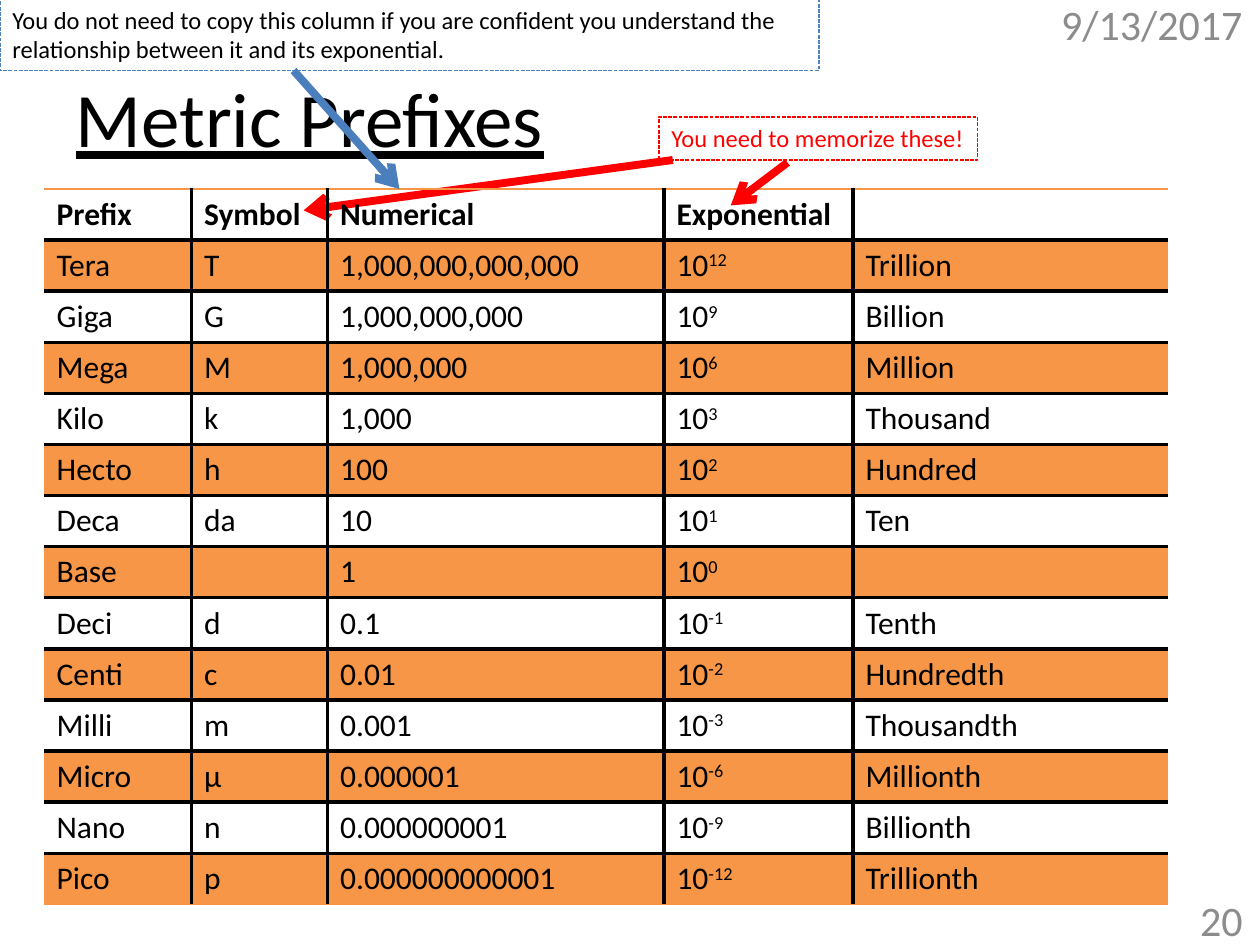
from lxml import etree
from pptx import Presentation
from pptx.dml.color import RGBColor
from pptx.enum.dml import MSO_LINE
from pptx.enum.shapes import MSO_CONNECTOR, MSO_SHAPE
from pptx.enum.text import MSO_ANCHOR, MSO_AUTO_SIZE, PP_ALIGN
from pptx.oxml.ns import qn
from pptx.util import Inches, Pt

STRAIGHT = MSO_CONNECTOR.STRAIGHT
RECTANGLE = MSO_SHAPE.RECTANGLE
DASH = MSO_LINE.SQUARE_DOT
LEFT, RIGHT = PP_ALIGN.LEFT, PP_ALIGN.RIGHT
TOP, MIDDLE = MSO_ANCHOR.TOP, MSO_ANCHOR.MIDDLE
GROW = MSO_AUTO_SIZE.SHAPE_TO_FIT_TEXT

FONT = "Calibri"
BLACK, RED, GREY, ORANGE = "000000", "FF0000", "8C8C8C", "F79646"
NO_GRID_STYLE = "{2D5ABB26-0587-4C30-8999-92F81FD0307C}"

COLUMN_WIDTHS = [1.17, 1.08, 2.67, 1.5, 2.5]
HEADINGS = ["Prefix", "Symbol", "Numerical", "Exponential", ""]
PREFIXES = [
    ("Tera", "T", "1,000,000,000,000", "12", "Trillion"),
    ("Giga", "G", "1,000,000,000", "9", "Billion"),
    ("Mega", "M", "1,000,000", "6", "Million"),
    ("Kilo", "k", "1,000", "3", "Thousand"),
    ("Hecto", "h", "100", "2", "Hundred"),
    ("Deca", "da", "10", "1", "Ten"),
    ("Base", "", "1", "0", ""),
    ("Deci", "d", "0.1", "-1", "Tenth"),
    ("Centi", "c", "0.01", "-2", "Hundredth"),
    ("Milli", "m", "0.001", "-3", "Thousandth"),
    ("Micro", "μ", "0.000001", "-6", "Millionth"),
    ("Nano", "n", "0.000000001", "-9", "Billionth"),
    ("Pico", "p", "0.000000000001", "-12", "Trillionth"),
]
EXPONENT_COLUMN = 3


def rgb(color):
    return RGBColor.from_string(color)


def add_text(p, text, size=18, color=BLACK, bold=False, underline=False,
             superscript=False, align=LEFT):
    p.alignment = align
    r = p.add_run()
    r.text = text
    font = r.font
    font.name, font.size = FONT, Pt(size)
    font.bold, font.underline = bold, underline
    font.color.rgb = rgb(color)
    if superscript:
        r._r.get_or_add_rPr().set("baseline", "30000")


def place(sp, left, top, width, height):
    sp.left, sp.top = Inches(left), Inches(top)
    sp.width, sp.height = Inches(width), Inches(height)


def add_title(s, box):
    title = s.shapes.title
    place(title, *box)
    tf = title.text_frame
    tf.vertical_anchor = MIDDLE
    add_text(tf.paragraphs[0], "Metric Prefixes", size=44, underline=True)
    # Bring the title in front of the shapes added so far.
    s.shapes._spTree.append(title._element)


def add_corner_text(s, box, text):
    tb = s.shapes.add_textbox(*map(Inches, box))
    tf = tb.text_frame
    tf.word_wrap = True
    tf.vertical_anchor = MIDDLE
    add_text(tf.paragraphs[0], text, size=24, color=GREY, align=RIGHT)


def add_callout(s, box, text, line, color):
    sp = s.shapes.add_shape(RECTANGLE, *map(Inches, box))
    sp.shadow.inherit = False
    sp.fill.background()
    sp.line.color.rgb = rgb(line)
    sp.line.width = Pt(0.75)
    sp.line.dash_style = DASH
    tf = sp.text_frame
    tf.word_wrap = True
    tf.auto_size = GROW
    tf.vertical_anchor = TOP
    add_text(tf.paragraphs[0], text, size=14, color=color)


def add_arrow(s, start, end, color):
    cx = s.shapes.add_connector(STRAIGHT, *map(Inches, start + end))
    cx.line.color.rgb = rgb(color)
    cx.line.width = Pt(4.5)
    etree.SubElement(cx.line._get_or_add_ln(), qn("a:tailEnd"), type="arrow")
    etree.SubElement(cx._element.spPr, qn("a:effectLst"))


def set_border(cell, side, color=None, width=0.0):
    """Draw one side of a cell, or clear it when no colour is given."""
    ln = etree.SubElement(cell._tc.get_or_add_tcPr(), qn("a:ln" + side),
                          w=str(Pt(width)))
    if color is None:
        etree.SubElement(ln, qn("a:noFill"))
    else:
        fill = etree.SubElement(ln, qn("a:solidFill"))
        etree.SubElement(fill, qn("a:srgbClr"), val=color)


def tint(cell):
    cell.fill.solid()
    cell.fill.fore_color.rgb = rgb(ORANGE)
    color = cell._tc.tcPr.find(".//" + qn("a:srgbClr"))
    etree.SubElement(color, qn("a:alpha"), val="20000")


def add_prefix_table(s, box):
    rows = [HEADINGS] + PREFIXES
    last_row, last_col = len(rows) - 1, len(HEADINGS) - 1
    table = s.shapes.add_table(len(rows), len(HEADINGS),
                               *map(Inches, box)).table
    table.first_row = table.horz_banding = False
    table._tbl.tblPr.find(qn("a:tableStyleId")).text = NO_GRID_STYLE
    for column, width in zip(table.columns, COLUMN_WIDTHS):
        column.width = Inches(width)
    grid, edge, blank = (BLACK, 2.25), (ORANGE, 1), ()
    for i, values in enumerate(rows):
        table.rows[i].height = Inches(box[3] / len(rows))
        for j, value in enumerate(values):
            cell = table.cell(i, j)
            p = cell.text_frame.paragraphs[0]
            if i and j == EXPONENT_COLUMN:
                add_text(p, "10")
                add_text(p, value, superscript=True)
            elif value:
                add_text(p, value, bold=i == 0)
            set_border(cell, "L", *(grid if j else blank))
            set_border(cell, "R", *(grid if j < last_col else blank))
            set_border(cell, "T", *(grid if i else edge))
            set_border(cell, "B", *(grid if i < last_row else edge))
            if i % 2:
                tint(cell)
            else:
                cell.fill.background()


def build_prefix_slide(prs):
    s = prs.slides.add_slide(prs.slide_layouts[5])
    add_arrow(s, (5.34, 1.27), (2.41, 1.67), RED)
    add_title(s, (0.5, 0.3, 9, 1.25))
    add_prefix_table(s, (0.35, 1.5, 8.92, 5.68))
    add_corner_text(s, (8.25, -0.01, 1.71, 0.4), "9/13/2017")
    add_arrow(s, (2.33, 0.56), (3.17, 1.5), "4B7EBC")
    add_callout(s, (0, -0.01, 6.5, 0.57),
                "You do not need to copy this column if you are confident you "
                "understand the relationship between it and its exponential.",
                line="4F81BD", color=BLACK)
    add_corner_text(s, (9.29, 7.1, 0.67, 0.4), "20")
    add_callout(s, (5.23, 0.93, 2.53, 0.34), "You need to memorize these!",
                line=RED, color=RED)
    add_arrow(s, (6.25, 1.29), (5.8, 1.63), RED)


def main():
    prs = Presentation()
    prs.slide_width, prs.slide_height = Inches(10), Inches(7.5)
    build_prefix_slide(prs)
    prs.save("out.pptx")


if __name__ == "__main__":
    main()
